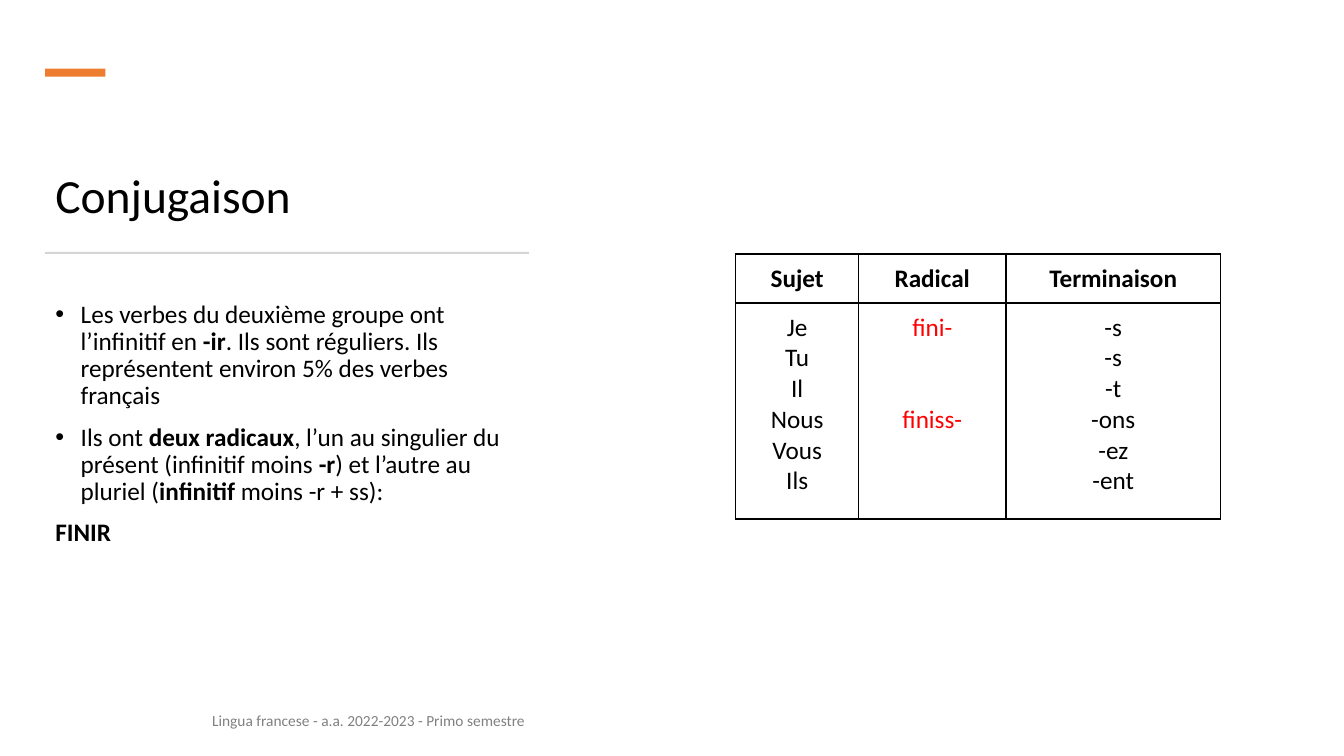
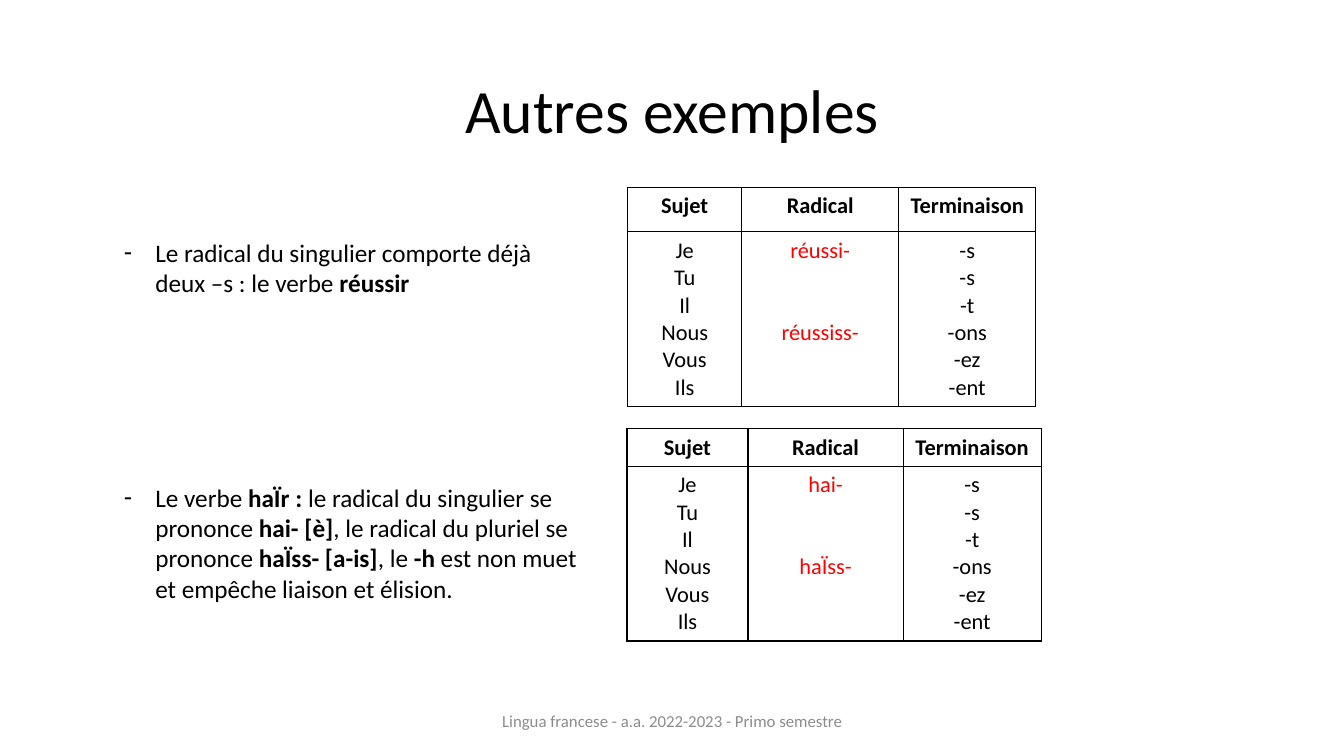
from dataclasses import dataclass
from typing import Any

from lxml.etree import SubElement
from pptx import Presentation
from pptx.dml.color import RGBColor
from pptx.enum.shapes import MSO_SHAPE as Preset
from pptx.enum.text import MSO_ANCHOR as Anchor, MSO_AUTO_SIZE as AutoSize, PP_ALIGN as Align
from pptx.oxml import parse_xml
from pptx.oxml.ns import nsdecls, qn
from pptx.util import Cm, Pt

FONT = "Calibri"
BLACK, WHITE, RED = "000000", "FFFFFF", "FF0000"
ORANGE, RULE_GREY = "ED7D31", "D5D5D5"
LINE_HEIGHT = 1.22  # Calibri line, as a multiple of the text size
TITLE_AND_CONTENT = 1
COURSE = "Lingua francese - a.a. 2022-2023 - Primo semestre"

HEADINGS = ("Sujet", "Radical", "Terminaison")
SUBJECTS = ("Je", "Tu", "Il", "Nous", "Vous", "Ils")
ENDINGS = ("-s", "-s", "-t", "-ons", "-ez", "-ent")
SINGULAR_PERSONS = 3


@dataclass(frozen=True)
class Box:
    """A frame in centimetres."""
    left: float
    top: float
    width: float
    height: float

    def emu(self) -> tuple[int, int, int, int]:
        return Cm(self.left), Cm(self.top), Cm(self.width), Cm(self.height)


@dataclass(frozen=True)
class Item:
    """A body paragraph; **marks** enclose bold words."""
    text: str
    bullet: str = ""
    indent: float = 0
    space_before: float = 0
    line_spacing: float = 1.0


@dataclass(frozen=True)
class Conjugation:
    left: float
    top: float
    columns: tuple[float, float, float]
    rows: tuple[float, float]
    singular: str
    plural: str
    size: float = 16
    margins: tuple[float, float] = (0.25, 0.13)


def rgb(value: str) -> RGBColor:
    return RGBColor.from_string(value)


def apply(target: Any, formats: dict[str, Any]) -> None:
    for name, value in formats.items():
        setattr(target, name, value)


def add_text(paragraph: Any, text: str, size: float, color: str = BLACK, bold: bool = False) -> None:
    """Add runs to the paragraph, toggling bold at each ** mark."""
    for index, part in enumerate(text.split("**")):
        if part:
            run = paragraph.add_run()
            run.text = part
            apply(run.font, {"name": FONT, "size": Pt(size), "bold": bold or index % 2 == 1})
            run.font.color.rgb = rgb(color)


def place(shape: Any, box: Box, anchor: Any) -> Any:
    """Move a text shape and return its emptied text frame."""
    left, top, width, height = box.emu()
    apply(shape, {"left": left, "top": top, "width": width, "height": height})
    frame = shape.text_frame
    apply(frame, {"word_wrap": True, "auto_size": AutoSize.NONE, "vertical_anchor": anchor})
    return frame


def paragraphs(frame: Any, count: int) -> list[Any]:
    return [frame.paragraphs[0], *(frame.add_paragraph() for _ in range(count - 1))]


def set_bullet(paragraph: Any, bullet: str, indent: float) -> None:
    properties = paragraph._p.get_or_add_pPr()
    properties.set("marL", str(Cm(indent)))
    properties.set("indent", str(-Cm(indent)))
    if bullet:
        SubElement(properties, qn("a:buChar")).set("char", bullet)
    else:
        SubElement(properties, qn("a:buNone"))


def set_title(slide: Any, text: str, box: Box, size: float, align: Any, anchor: Any) -> None:
    title = place(slide.shapes.title, box, anchor).paragraphs[0]
    apply(title, {"alignment": align, "line_spacing": 0.9})
    add_text(title, text, size)


def set_body(slide: Any, box: Box, items: list[Item]) -> None:
    frame = place(slide.placeholders[1], box, Anchor.TOP)
    for paragraph, item in zip(paragraphs(frame, len(items)), items):
        apply(paragraph, {"alignment": Align.LEFT, "line_spacing": item.line_spacing,
                          "space_before": Pt(item.space_before)})
        set_bullet(paragraph, item.bullet, item.indent)
        add_text(paragraph, item.text, 18)


def add_footer(slide: Any, box: Box, size: float, color: str, align: Any) -> None:
    footer = place(slide.shapes.add_textbox(*box.emu()), box, Anchor.MIDDLE).paragraphs[0]
    footer.alignment = align
    add_text(footer, COURSE, size, color)


def add_bar(slide: Any, box: Box, color: str) -> None:
    bar = slide.shapes.add_shape(Preset.RECTANGLE, *box.emu())
    bar.shadow.inherit = False
    bar.fill.solid()
    bar.fill.fore_color.rgb = rgb(color)
    bar.line.fill.background()


def add_borders(cell: Any) -> None:
    properties = cell._tc.get_or_add_tcPr()
    for index, side in enumerate(("lnL", "lnR", "lnT", "lnB")):
        properties.insert(index, parse_xml(
            f'<a:{side} {nsdecls("a")} w="{Pt(1)}"><a:solidFill>'
            f'<a:srgbClr val="{BLACK}"/></a:solidFill></a:{side}>'))


def fill_cell(cell: Any, lines: tuple[str, ...], verb: Conjugation,
              color: str = BLACK, bold: bool = False) -> list[Any]:
    side, end = (Cm(margin) for margin in verb.margins)
    apply(cell, {"margin_left": side, "margin_right": side, "margin_top": end,
                 "margin_bottom": end, "vertical_anchor": Anchor.TOP})
    cell.fill.solid()
    cell.fill.fore_color.rgb = rgb(WHITE)
    add_borders(cell)
    written = paragraphs(cell.text_frame, len(lines))
    for paragraph, line in zip(written, lines):
        paragraph.alignment = Align.CENTER
        add_text(paragraph, line, verb.size, color, bold)
    return written


def add_conjugation(slide: Any, verb: Conjugation) -> None:
    box = Box(verb.left, verb.top, sum(verb.columns), sum(verb.rows))
    table = slide.shapes.add_table(2, len(HEADINGS), *box.emu()).table
    apply(table, {"first_row": False, "horz_banding": False})
    for column, width in zip(table.columns, verb.columns):
        column.width = Cm(width)
    for row, height in zip(table.rows, verb.rows):
        row.height = Cm(height)
    for index, heading in enumerate(HEADINGS):
        fill_cell(table.cell(0, index), (heading,), verb, bold=True)
    fill_cell(table.cell(1, 0), SUBJECTS, verb)
    _, plural = fill_cell(table.cell(1, 1), (verb.singular, verb.plural), verb, RED)
    plural.space_before = Pt(round((SINGULAR_PERSONS - 1) * LINE_HEIGHT * verb.size, 1))
    fill_cell(table.cell(1, 2), ENDINGS, verb)


def build_conjugation_slide(slide: Any) -> None:
    left, width = 1.14, 12.34
    set_title(slide, "Conjugaison", Box(left, 2.74, width, 3.02), 34, Align.LEFT, Anchor.BOTTOM)
    add_bar(slide, Box(left, 1.73, 1.52, 0.2), ORANGE)
    add_bar(slide, Box(left, 6.35, 12.19, 0.05), RULE_GREY)
    bulleted = {"bullet": "•", "indent": 0.64}
    spacing = {"space_before": 10, "line_spacing": 0.9}
    set_body(slide, Box(left, 7.47, width, 9.7), [
        Item("Les verbes du deuxième groupe ont l’infinitif en** -ir**. Ils sont réguliers. "
             "Ils représentent environ 5% des verbes français", **bulleted, **spacing),
        Item("Ils ont **deux radicaux**, l’un au singulier du présent (infinitif moins **-r**) "
             "et l’autre au pluriel (**infinitif** moins -r + ss):", **bulleted, **spacing),
        Item("**FINIR**", **spacing),
    ])
    add_footer(slide, Box(5.08, 17.65, 8.41, 1.02), 11, "808080", Align.RIGHT)
    add_conjugation(slide, Conjugation(18.54, 6.4, (3.1, 3.71, 5.41), (1.22, 5.44),
                                       "fini-", "finiss-", 18, (0.46, 0.23)))


def build_examples_slide(slide: Any) -> None:
    set_title(slide, "Autres exemples", Box(2.34, 1.02, 29.21, 3.68), 44, Align.CENTER, Anchor.MIDDLE)
    dashed = {"bullet": "-", "indent": 0.79}
    set_body(slide, Box(2.87, 5.84, 11.94, 12.57), [
        Item("Le radical du singulier comporte déjà deux –s : le verbe **réussir**", **dashed),
        Item("Le verbe **haÏr : **le radical du singulier se prononce **hai- [è]**, le radical "
             "du pluriel se prononce **haÏss- [a-is]**, le **-h** est non muet et empêche "
             "liaison et élision.", space_before=132, **dashed),
    ])
    for verb in (
        Conjugation(15.82, 4.72, (2.87, 3.96, 3.45), (1.12, 4.4), "réussi-", "réussiss-"),
        Conjugation(15.8, 10.8, (3.05, 3.91, 3.48), (0.94, 4.4), "hai-", "haÏss-"),
    ):
        add_conjugation(slide, verb)
    add_footer(slide, Box(11.23, 17.65, 11.43, 1.02), 12, "8C8C8C", Align.CENTER)


def main() -> None:
    deck = Presentation()
    apply(deck, {"slide_width": Cm(33.87), "slide_height": Cm(19.05)})
    for build in (build_conjugation_slide, build_examples_slide):
        build(deck.slides.add_slide(deck.slide_layouts[TITLE_AND_CONTENT]))
    deck.save("out.pptx")


if __name__ == "__main__":
    main()
